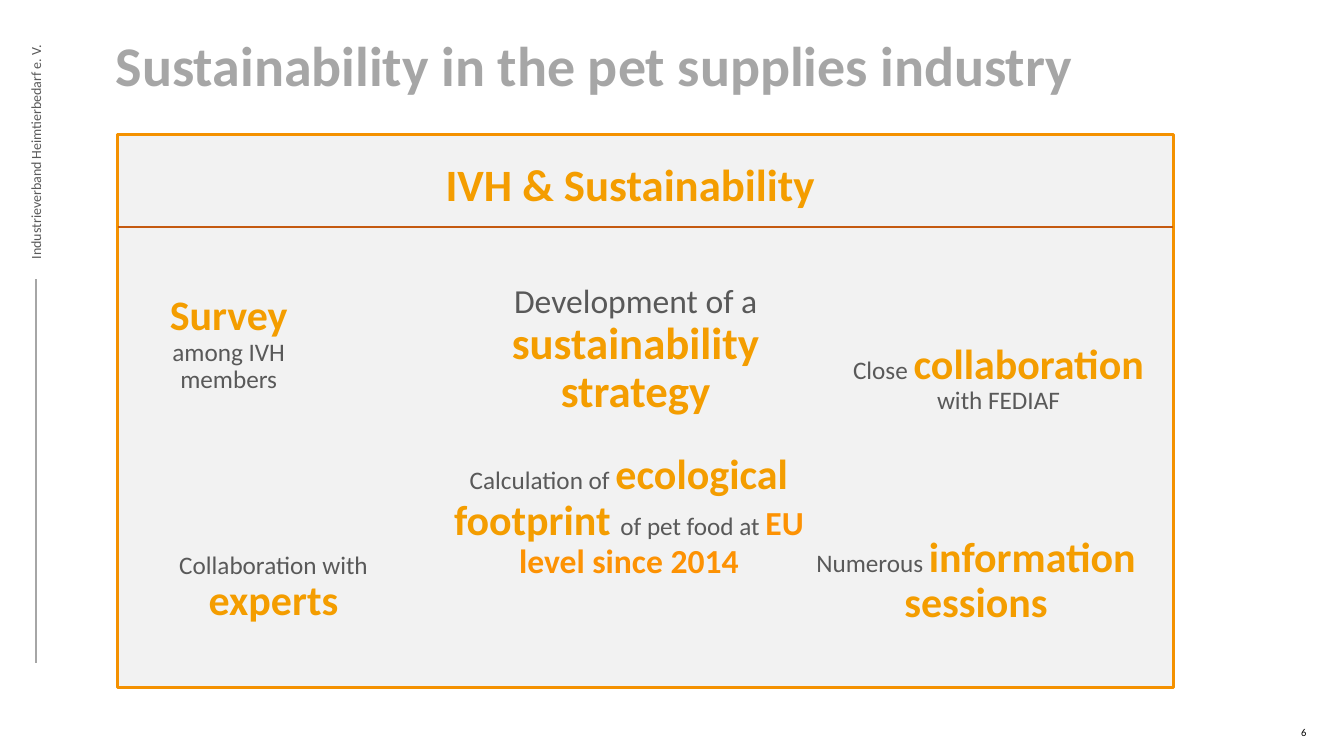
from pptx import Presentation
from pptx.dml.color import RGBColor
from pptx.enum import shapes, text
from pptx.oxml import xmlchemy as xml
from pptx.util import Cm, Pt

ORANGE = RGBColor(0xF4, 0x9D, 0x00)
AMBER = RGBColor(0xFD, 0x92, 0x03)
EDGE = RGBColor(0xF4, 0x91, 0x00)
RUST = RGBColor(0xC5, 0x5A, 0x11)
DARK = RGBColor(0x59, 0x59, 0x59)
GREY = RGBColor(0xA6, 0xA6, 0xA6)
PALE = RGBColor(0xF2, 0xF2, 0xF2)
BLACK = RGBColor(0x00, 0x00, 0x00)

# Run styles: size, colour, bold
SMALL = (18, DARK, False)
LEAD = (24, DARK, False)
KEY = (30, ORANGE, True)
HEAD = (32, ORANGE, True)
LEVEL = (24, AMBER, True)

# Statements: left, top, width in cm, then the runs
NOTES = [
    (3.91, 4.11, 24.21, [("IVH & Sustainability ", HEAD)]),
    (3.53, 7.42, 4.47, [("Survey ", KEY), ("among IVH members", SMALL)]),
    (12.5, 7.16, 7.04, [("Development of a ", LEAD),
                        ("sustainability strategy", HEAD)]),
    (21.23, 8.64, 7.87, [("Close ", SMALL), ("collaboration", KEY),
                         (" with FEDIAF", SMALL)]),
    (10.62, 11.43, 10.46, [("Calculation of ", SMALL),
                           ("ecological footprint ", KEY),
                           ("of pet food at ", SMALL),
                           ("EU level since 2014", LEVEL)]),
    (2.97, 13.92, 7.85, [("Collaboration with ", SMALL), ("experts", KEY)]),
    (20.55, 13.51, 8.1, [("Numerous ", SMALL),
                         ("information sessions", KEY)]),
]


def set_all(item, vals):
    for name, val in vals.items():
        setattr(item, name, val)


def add_text(slide, left, top, width, height, runs, frame=None, para=None):
    box = slide.shapes.add_textbox(Cm(left), Cm(top), Cm(width), Cm(height))
    body = box.text_frame
    set_all(body, {"word_wrap": True, **(frame or {})})
    line = body.paragraphs[0]
    set_all(line, para or {})
    for words, (size, color, bold) in runs:
        run = line.add_run()
        run.text = words
        set_all(run.font, {"name": "Calibri", "size": Pt(size), "bold": bold})
        run.font.color.rgb = color
    return box


def add_note(slide, left, top, width, runs):
    sides = ("left", "top", "right", "bottom")
    frame = {f"margin_{side}": 0 for side in sides}
    para = {"alignment": text.PP_ALIGN.CENTER, "line_spacing": 0.9,
            "space_after": Pt(10)}
    add_text(slide, left, top, width, 2, runs, frame, para)


def add_rule(slide, x1, y1, x2, y2, color, width):
    rule = slide.shapes.add_connector(
        shapes.MSO_CONNECTOR.STRAIGHT, Cm(x1), Cm(y1), Cm(x2), Cm(y2))
    rule.line.color.rgb = color
    rule.line.width = Pt(width)
    props = rule._element.spPr
    props.append(xml.OxmlElement("a:effectLst"))


def add_panel(slide, left, top, width, height):
    panel = slide.shapes.add_shape(
        shapes.MSO_SHAPE.RECTANGLE, Cm(left), Cm(top), Cm(width), Cm(height))
    panel.shadow.inherit = False
    panel.fill.solid()
    panel.fill.fore_color.rgb = PALE
    panel.line.color.rgb = EDGE
    panel.line.width = Pt(2)


def main():
    deck = Presentation()
    set_all(deck, {"slide_width": Cm(33.87), "slide_height": Cm(19.05)})
    slide = deck.slides.add_slide(deck.slide_layouts[6])

    # Page number and side strip
    add_text(slide, 32.54, 18.16, 1.33, 0.58, [("6", (7.5, BLACK, False))])
    side = add_text(slide, -2.13, 3.4, 6.07, 0.69,
                    [("Industrieverband Heimtierbedarf e. V.",
                      (10, DARK, False))], {"word_wrap": False})
    side.rotation = 270
    add_rule(slide, 0.91, 7.04, 0.91, 16.71, GREY, 1)

    # Title
    add_text(slide, 2.67, 0.64, 29.9, 1.96,
             [("Sustainability in the pet supplies industry",
               (40, GREY, True))])

    # Panel with heading rule and statements
    add_panel(slide, 2.97, 3.4, 26.6, 13.92)
    add_rule(slide, 2.97, 5.72, 29.57, 5.72, RUST, 1.5)
    for note in NOTES:
        add_note(slide, *note)

    deck.save("out.pptx")


if __name__ == "__main__":
    main()
